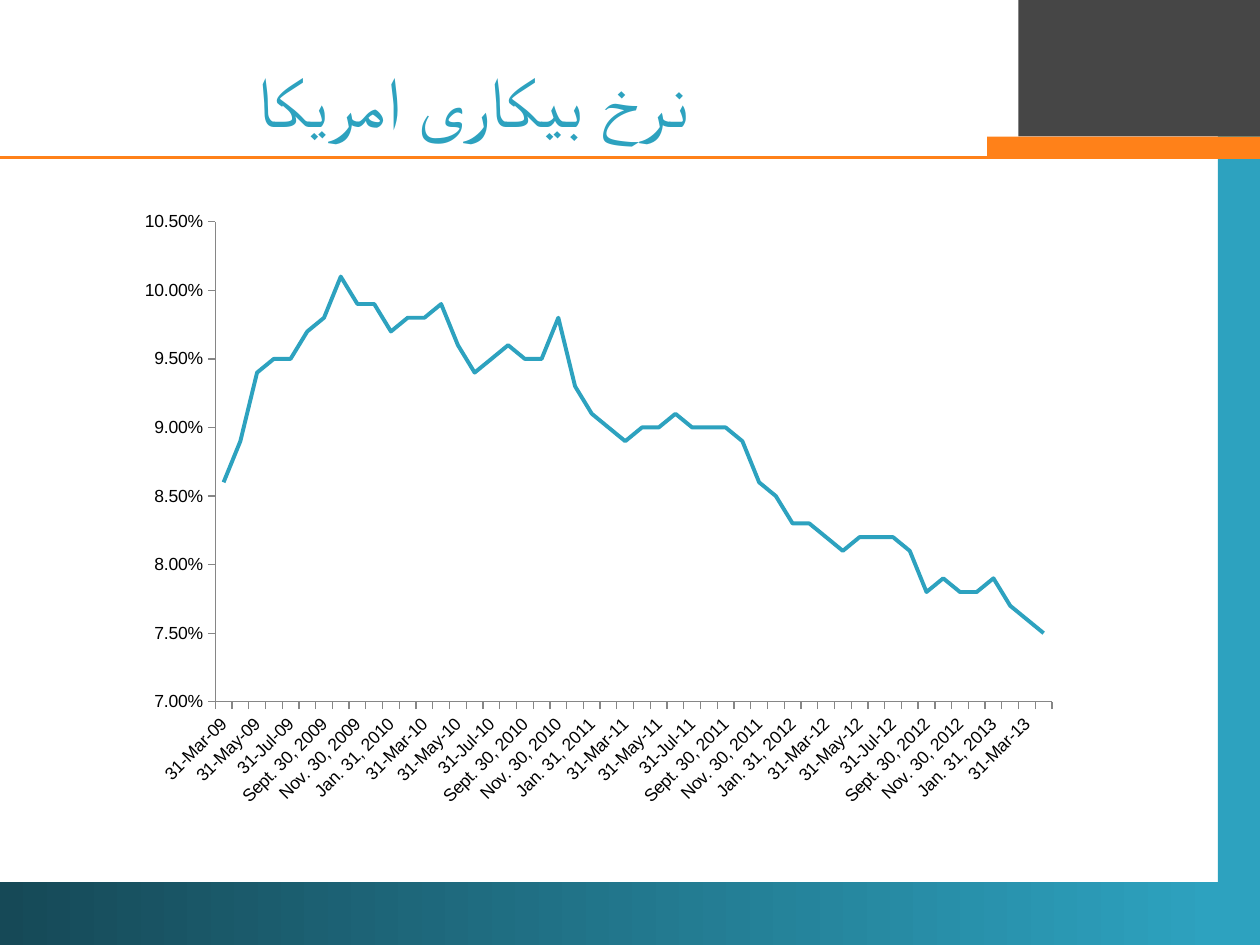
from lxml.etree import SubElement
from pptx import Presentation
from pptx.chart.data import CategoryChartData
from pptx.dml.color import RGBColor
from pptx.enum.chart import XL_CHART_TYPE as ChartType, XL_TICK_MARK as TickMark
from pptx.enum.shapes import MSO_CONNECTOR as Connector, MSO_SHAPE as Shape
from pptx.enum.text import MSO_ANCHOR as Anchor, MSO_AUTO_SIZE as AutoSize, PP_ALIGN as Align
from pptx.oxml.ns import qn
from pptx.util import Pt

TEAL = RGBColor(0x2D, 0xA2, 0xBF)
DARK_TEAL = RGBColor(0x16, 0x49, 0x57)
GREY = RGBColor(0x46, 0x46, 0x46)
ORANGE = RGBColor(0xFF, 0x81, 0x19)
AXIS_GREY = RGBColor(0x86, 0x86, 0x86)
BLACK = RGBColor(0, 0, 0)
FONT = "Arial"

deck = Presentation()
deck.slide_width, deck.slide_height = Pt(720), Pt(540)
page = deck.slides.add_slide(deck.slide_layouts[5])


def add_band(left, top, width, height, color):
    band = page.shapes.add_shape(Shape.RECTANGLE, Pt(left), Pt(top), Pt(width), Pt(height))
    band.shadow.inherit = False
    band.fill.solid()
    band.fill.fore_color.rgb = color
    band.line.fill.background()
    return band


add_band(696, 18, 24, 522, TEAL)
footer = add_band(0, 504, 696, 36, DARK_TEAL)
footer.fill.gradient()
footer.fill.gradient_angle = 0
for stop, color in zip(footer.fill.gradient_stops, (DARK_TEAL, TEAL)):
    stop.color.rgb = color
add_band(582, 0, 138, 78, GREY)

rule = page.shapes.add_connector(Connector.STRAIGHT, Pt(720), Pt(90), Pt(0), Pt(90))
rule.line.color.rgb = ORANGE
rule.line.width = Pt(2.25)
SubElement(rule._element.spPr, qn("a:effectLst"))
add_band(564, 78, 156, 12, ORANGE)

title = page.shapes.title
title.left, title.top, title.width, title.height = Pt(0), Pt(36), Pt(540), Pt(42)
frame = title.text_frame
frame.text = "نرخ بیکاری امریکا"
frame.auto_size = AutoSize.NONE
frame.vertical_anchor = Anchor.MIDDLE
para = frame.paragraphs[0]
para.alignment = Align.CENTER
para._p.get_or_add_pPr().set("rtl", "1")
span = para.runs[0]
span.font.size = Pt(40)
span.font.color.rgb = TEAL
span.font.name = FONT
SubElement(span._r.get_or_add_rPr(), qn("a:cs"), typeface=FONT)

MONTHS = ["Jan.", "Feb.", "Mar", "Apr", "May", "Jun", "Jul", "Aug.", "Sept.", "Oct.", "Nov.", "Dec."]
MONTH_DAYS = [31, 28, 31, 30, 31, 30, 31, 31, 30, 31, 30, 31]
RATES = [
    8.6, 8.9, 9.4, 9.5, 9.5, 9.7, 9.8, 10.1, 9.9, 9.9,
    9.7, 9.8, 9.8, 9.9, 9.6, 9.4, 9.5, 9.6, 9.5, 9.5, 9.8, 9.3,
    9.1, 9.0, 8.9, 9.0, 9.0, 9.1, 9.0, 9.0, 9.0, 8.9, 8.6, 8.5,
    8.3, 8.3, 8.2, 8.1, 8.2, 8.2, 8.2, 8.1, 7.8, 7.9, 7.8, 7.8,
    7.9, 7.7, 7.6, 7.5,
]

dates = []
for offset in range(2, 2 + len(RATES)):
    year, month = 2009 + offset // 12, offset % 12
    name, day = MONTHS[month], MONTH_DAYS[month]
    if month == 1 and year % 4 == 0:
        day = 29
    dates.append(f"{name} {day}, {year}" if name.endswith(".") else f"{day}-{name}-{year % 100:02}")

data = CategoryChartData(number_format="0.00%")
data.categories = dates
data.add_series("Series 1", [round(rate / 100, 3) for rate in RATES])
chart = page.shapes.add_chart(ChartType.LINE, Pt(72), Pt(114), Pt(540), Pt(354), data).chart
chart.has_legend = False
chart.has_title = False
chart.font.size = Pt(10)
chart.font.name = FONT
chart.font.color.rgb = BLACK

series = chart.plots[0].series[0]
series.smooth = False
series.format.line.color.rgb = TEAL
series.format.line.width = Pt(2.25)

for axis in (chart.category_axis, chart.value_axis):
    axis.has_major_gridlines = False
    axis.major_tick_mark = TickMark.OUTSIDE
    axis.minor_tick_mark = TickMark.NONE
    axis.format.line.color.rgb = AXIS_GREY
    axis.tick_labels.font.size = Pt(10)

value_axis = chart.value_axis
value_axis.minimum_scale = 0.07
value_axis.maximum_scale = 0.105
value_axis.major_unit = 0.005
value_axis.tick_labels.number_format = "0.00%"
value_axis.tick_labels.number_format_is_linked = False
chart.category_axis._element.txPr.find(qn("a:bodyPr")).set("rot", "-2700000")

deck.save("out.pptx")
